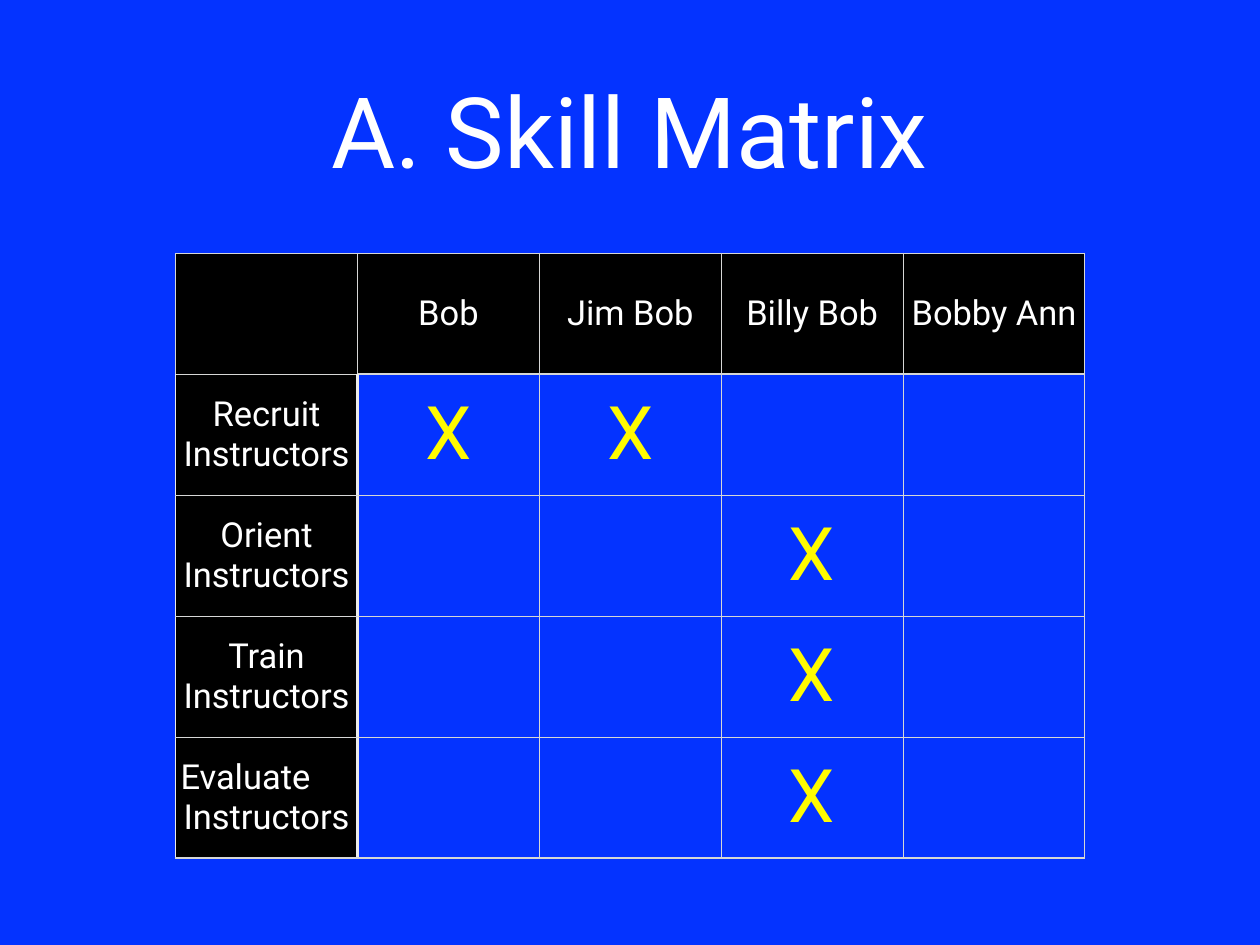
from lxml import etree
from pptx import Presentation
from pptx.dml.color import RGBColor
from pptx.enum.text import MSO_ANCHOR, PP_ALIGN
from pptx.oxml.ns import qn
from pptx.util import Pt

MIDDLE = MSO_ANCHOR.MIDDLE
CENTER, LEFT = PP_ALIGN.CENTER, PP_ALIGN.LEFT
BLUE, BLACK, WHITE, YELLOW = "0433FF", "000000", "FFFFFF", "FFFB00"
GREY, PALE = "D6D7D6", "EBEBEB"


def tint(code):
    return RGBColor.from_string(code)


def write(para, text, size, code, align=CENTER):
    para.alignment = align
    run = para.add_run()
    run.text = text
    form = {"name": "Roboto", "size": Pt(size), "bold": False}
    for key, val in form.items():
        setattr(run.font, key, val)
    run.font.color.rgb = tint(code)


deck = Presentation()
deck.slide_width, deck.slide_height = Pt(1024), Pt(768)
slide = deck.slides.add_slide(deck.slide_layouts[6])
slide.background.fill.solid()
slide.background.fill.fore_color.rgb = tint(BLUE)

title = slide.shapes.add_textbox(Pt(75), Pt(20), Pt(874), Pt(170)).text_frame
form = {"word_wrap": True, "vertical_anchor": MIDDLE, "margin_left": 0,
        "margin_right": 0, "margin_top": 0, "margin_bottom": 0}
for key, val in form.items():
    setattr(title, key, val)
write(title.paragraphs[0], "A. Skill Matrix", 80, WHITE)

rows = [
    ["", "Bob", "Jim Bob", "Billy Bob", "Bobby Ann"],
    ["Recruit Instructors", "X", "X", "", ""],
    ["Orient Instructors", "", "", "X", ""],
    ["Train Instructors", "", "", "X", ""],
    ["Evaluate\nInstructors", "", "", "X", ""],
]
wide, high = 147.8, 98.3
frame = slide.shapes.add_table(5, 5, Pt(142.7), Pt(205.9),
                               Pt(5 * wide), Pt(5 * high))
table = frame.table
table.first_row = table.horz_banding = False
for col in table.columns:
    col.width = Pt(wide)
for row in table.rows:
    row.height = Pt(high)

pads = {"vertical_anchor": MIDDLE, "margin_left": Pt(4), "margin_right": Pt(4),
        "margin_top": Pt(4), "margin_bottom": Pt(4)}
for r, row in enumerate(rows):
    for c, text in enumerate(row):
        cell = table.cell(r, c)
        for key, val in pads.items():
            setattr(cell, key, val)

        plain, light, bold = (GREY, 1), (PALE, 1), (PALE, 2)
        edges = {
            "L": bold if r and c == 1 else light if r and c == 0 else plain,
            "R": bold if r and c == 0 else plain,
            "T": (GREY, 2) if r == 1 and c else plain,
            "B": (GREY, 2) if r == 0 and c else plain,
        }
        props = cell._tc.get_or_add_tcPr()
        for side, (code, width) in edges.items():
            line = etree.SubElement(props, qn("a:ln" + side), w=str(Pt(width)))
            fill = etree.SubElement(line, qn("a:solidFill"))
            etree.SubElement(fill, qn("a:srgbClr"), val=code)

        if r == 0 or c == 0:
            cell.fill.solid()
            cell.fill.fore_color.rgb = tint(BLACK)
        else:
            cell.fill.background()

        size, code = (60, YELLOW) if text == "X" else (28, WHITE)
        parts = text.split("\n") if text else []
        for i, part in enumerate(parts):
            body = cell.text_frame
            para = body.add_paragraph() if i else body.paragraphs[0]
            align = LEFT if part == "Evaluate" else CENTER
            write(para, part, size, code, align)

deck.save("out.pptx")
